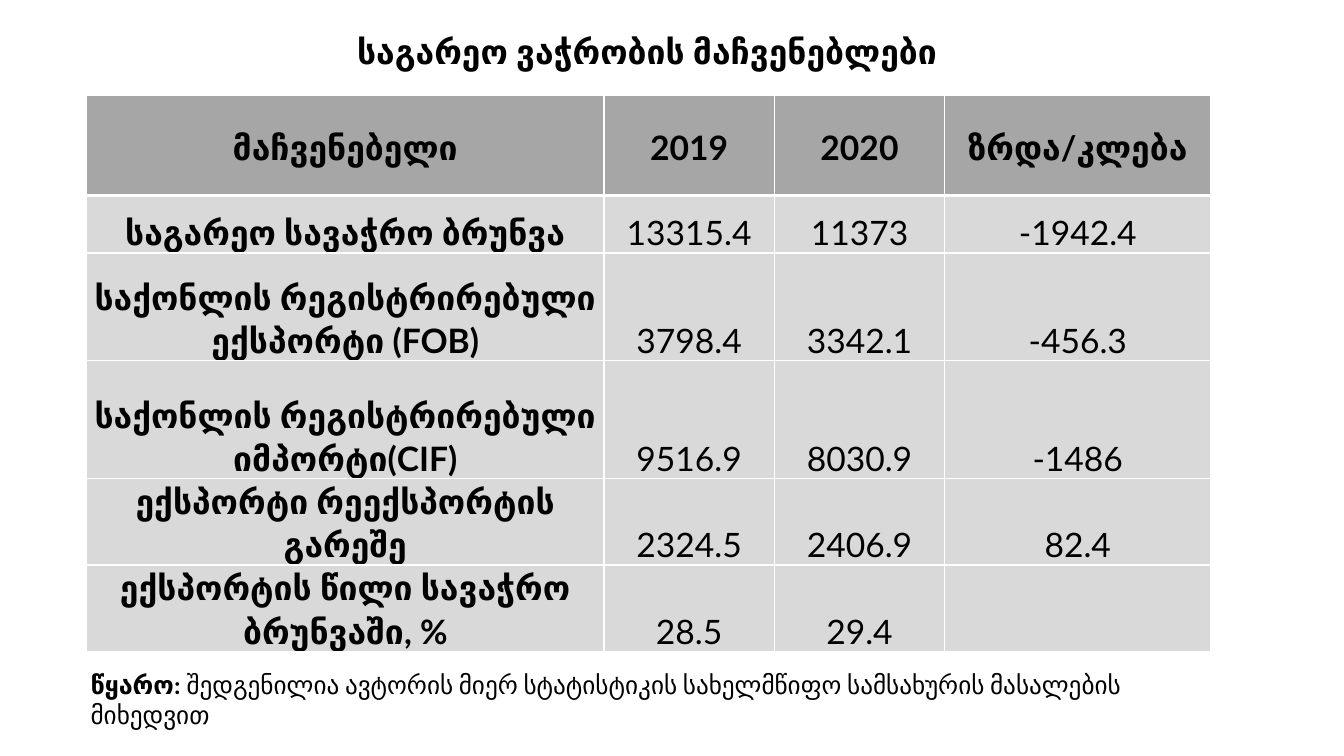
from lxml.etree import SubElement
from pptx import Presentation
from pptx.dml.color import RGBColor
from pptx.enum.text import MSO_ANCHOR, MSO_AUTO_SIZE, PP_ALIGN
from pptx.oxml.ns import qn
from pptx.util import Inches, Pt

BLACK = RGBColor(0x00, 0x00, 0x00)
WHITE = RGBColor(0xFF, 0xFF, 0xFF)
HEADER_GRAY = RGBColor(0xA6, 0xA6, 0xA6)
BODY_GRAY = RGBColor(0xD9, 0xD9, 0xD9)

COLUMN_WIDTHS = [5.13, 1.69, 1.69, 2.64]
ROW_HEIGHTS = [0.99, 0.57, 1.07, 1.17, 0.77, 0.73]
TRADE_ROWS = [
    ["მაჩვენებელი", "2019", "2020", "ზრდა/კლება"],
    ["საგარეო სავაჭრო ბრუნვა", "13315.4", "11373", "-1942.4"],
    ["საქონლის რეგისტრირებული ექსპორტი (FOB)", "3798.4", "3342.1", "-456.3"],
    ["საქონლის რეგისტრირებული იმპორტი(CIF)", "9516.9", "8030.9", "-1486"],
    ["ექსპორტი რეექსპორტის გარეშე", "2324.5", "2406.9", "82.4"],
    ["ექსპორტის წილი სავაჭრო ბრუნვაში, %", "28.5", "29.4", ""],
]
CELL_FORMAT = {
    "margin_left": Inches(0.07),
    "margin_right": Inches(0.07),
    "margin_top": 0,
    "margin_bottom": 0,
}


def add_span(para, text, font_name, size, bold):
    span = para.add_run()
    span.text = text
    font_format = {"name": font_name, "size": Pt(size), "bold": bold}
    for name, value in font_format.items():
        setattr(span.font, name, value)
    span.font.color.rgb = BLACK


def add_border(cell, side, width):
    """Draw a white line on one side (L, R, T or B); call before filling the cell."""
    line = SubElement(cell._tc.get_or_add_tcPr(), qn(f"a:ln{side}"), w=str(Pt(width)))
    fill = SubElement(line, qn("a:solidFill"))
    SubElement(fill, qn("a:srgbClr"), val=str(WHITE))


deck = Presentation()
deck.slide_width = Inches(13.33)
deck.slide_height = Inches(7.5)
page = deck.slides.add_slide(deck.slide_layouts[6])

# Trade table
table = page.shapes.add_table(
    len(ROW_HEIGHTS), len(COLUMN_WIDTHS),
    Inches(0.86), Inches(0.95), Inches(sum(COLUMN_WIDTHS)), Inches(sum(ROW_HEIGHTS)),
).table
table.horz_banding = False
for column, width in zip(table.columns, COLUMN_WIDTHS):
    column.width = Inches(width)
for row, height in zip(table.rows, ROW_HEIGHTS):
    row.height = Inches(height)

for row_index, values in enumerate(TRADE_ROWS):
    is_header = row_index == 0
    for column_index, value in enumerate(values):
        cell = table.cell(row_index, column_index)
        for side in "LRTB":
            heavy = (is_header and side == "B") or (row_index == 1 and side == "T")
            add_border(cell, side, 3 if heavy else 1)
        cell.fill.solid()
        cell.fill.fore_color.rgb = HEADER_GRAY if is_header else BODY_GRAY
        for name, setting in CELL_FORMAT.items():
            setattr(cell, name, setting)
        cell.vertical_anchor = MSO_ANCHOR.MIDDLE if is_header else MSO_ANCHOR.BOTTOM
        if value:
            para = cell.text_frame.paragraphs[0]
            para.alignment = PP_ALIGN.CENTER
            para.line_spacing = 1.07
            add_span(para, value, "Lato", 24, is_header or column_index == 0)

# Title and source note
text_boxes = [
    ((1.5, 0.26, 9.84, 0.5), PP_ALIGN.CENTER,
     [("საგარეო ვაჭრობის მაჩვენებლები", "Lato", 24, True)]),
    ((0.8, 6.59, 11.25, 0.4), PP_ALIGN.LEFT,
     [("წყარო: ", "Calibri", 18, True),
      ("შედგენილია ავტორის მიერ სტატისტიკის სახელმწიფო სამსახურის მასალების მიხედვით",
       "Calibri", 18, False)]),
]
for place, alignment, spans in text_boxes:
    box = page.shapes.add_textbox(*map(Inches, place))
    box.text_frame.word_wrap = True
    box.text_frame.auto_size = MSO_AUTO_SIZE.SHAPE_TO_FIT_TEXT
    para = box.text_frame.paragraphs[0]
    para.alignment = alignment
    for span_values in spans:
        add_span(para, *span_values)

deck.save("out.pptx")
